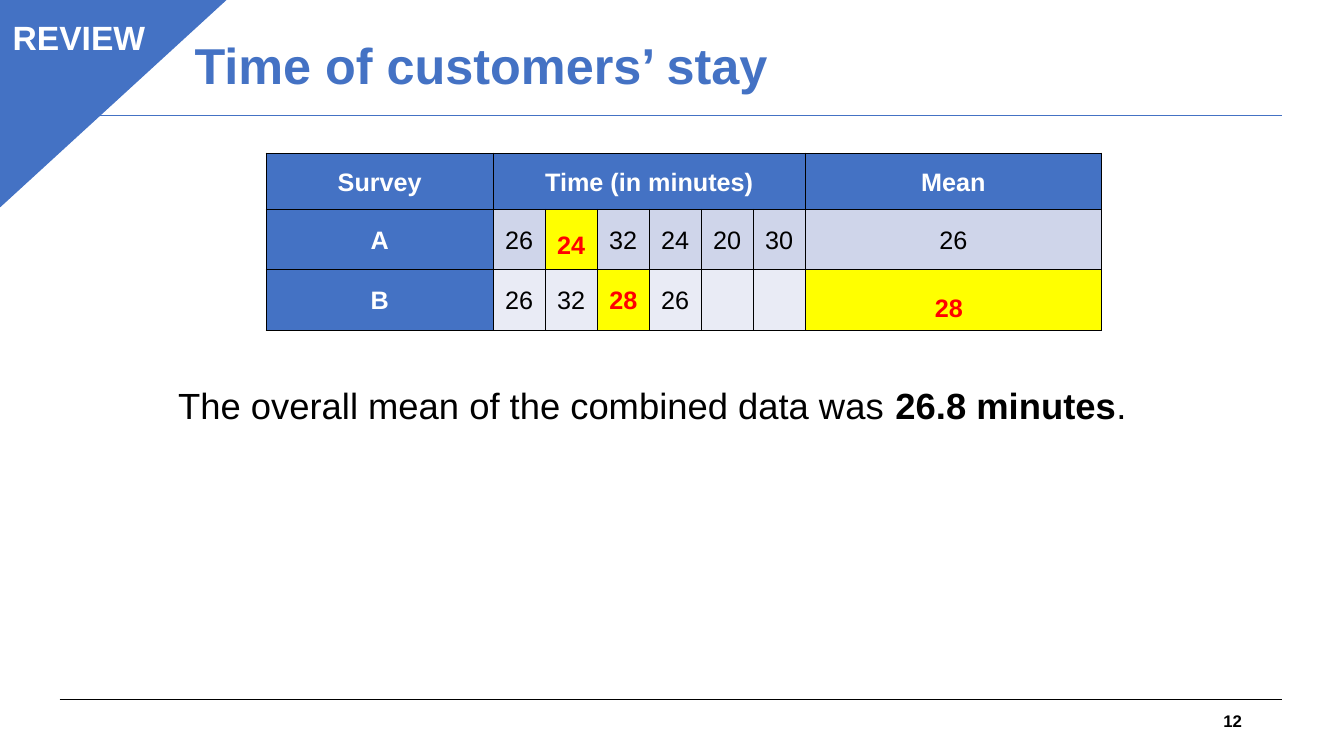
from dataclasses import dataclass

from pptx import Presentation
from pptx.dml.color import RGBColor
from pptx.enum.shapes import MSO_CONNECTOR as Line, MSO_SHAPE as Shape
from pptx.enum.text import MSO_ANCHOR as Anchor, MSO_AUTO_SIZE as Fit, PP_ALIGN as Align
from pptx.oxml import parse_xml
from pptx.oxml.ns import nsdecls
from pptx.util import Cm, Pt


@dataclass(frozen=True)
class Theme:
    font: str = "Arial"
    blue: str = "4472C4"
    black: str = "000000"
    white: str = "FFFFFF"
    red: str = "FF0000"
    yellow: str = "FFFF00"
    band_dark: str = "CFD5EA"
    band_light: str = "E9EBF5"
    title: int = 36
    body: int = 26
    badge: int = 24
    cell: int = 18
    page: int = 12


def set_all(obj, formats):
    for name, value in formats.items():
        setattr(obj, name, value)


class SlideBuilder:
    def __init__(self, slide, theme):
        self.slide = slide
        self.shapes = slide.shapes
        self.theme = theme

    def fill_text(self, tf, runs, size, color, align=Align.LEFT, spacing=None, **frame):
        """Fill a text frame with one paragraph of (text, bold) runs."""
        set_all(tf, {"word_wrap": True, **frame})
        p = tf.paragraphs[0]
        set_all(p, {"alignment": align, "line_spacing": spacing})
        for text, bold in runs:
            r = p.add_run()
            r.text = text
            set_all(r.font, {"name": self.theme.font, "size": Pt(size), "bold": bold})
            r.font.color.rgb = RGBColor.from_string(color)

    def title(self, text, box):
        sp = self.shapes.title
        set_all(sp, dict(zip(("left", "top", "width", "height"), map(Cm, box))))
        self.fill_text(sp.text_frame, [(text, True)], self.theme.title, self.theme.blue,
                       spacing=0.9, vertical_anchor=Anchor.MIDDLE)

    def text(self, runs, box, size, color, **formats):
        sp = self.shapes.add_textbox(*map(Cm, box))
        self.fill_text(sp.text_frame, runs, size, color, **formats)

    def rule(self, left, right, y, color):
        line = self.shapes.add_connector(Line.STRAIGHT, Cm(left), Cm(y), Cm(right), Cm(y))
        line.line.width = Pt(0.75)
        line.line.color.rgb = RGBColor.from_string(color)
        line.element.spPr.append(parse_xml(f"<a:effectLst {nsdecls('a')}/>"))

    def block(self, kind, box, color, width):
        sp = self.shapes.add_shape(kind, *map(Cm, box))
        sp.shadow.inherit = False
        sp.fill.solid()
        sp.fill.fore_color.rgb = sp.line.color.rgb = RGBColor.from_string(color)
        sp.line.width = Pt(width)
        return sp

    def cell(self, cell, text, fill, color, bold, margin):
        set_all(cell, {f"margin_{side}": Cm(margin)
                       for side in ("left", "right", "top", "bottom")})
        cell.vertical_anchor = Anchor.MIDDLE
        tc_pr = cell._tc.get_or_add_tcPr()
        for edge in ("lnL", "lnR", "lnT", "lnB"):
            tc_pr.append(parse_xml(
                f'<a:{edge} {nsdecls("a")} w="{Pt(1)}"><a:solidFill>'
                f'<a:srgbClr val="{self.theme.black}"/></a:solidFill></a:{edge}>'))
        cell.fill.solid()
        cell.fill.fore_color.rgb = RGBColor.from_string(fill)
        if text:
            self.fill_text(cell.text_frame, [(text, bold)], self.theme.cell, color,
                           align=Align.CENTER, spacing=1.07)

    def table(self, rows, bands, marked, left, top, widths, heights):
        t = self.theme
        frame = self.shapes.add_table(len(rows), len(widths), Cm(left), Cm(top),
                                      Cm(sum(widths)), Cm(sum(heights)))
        table = frame.table
        set_all(table, {"first_row": False, "horz_banding": False})
        for column, width in zip(table.columns, widths):
            column.width = Cm(width)
        for row, height in zip(table.rows, heights):
            row.height = Cm(height)
        for i, values in enumerate(rows):
            for j, value in enumerate(values):
                head = i == 0 or j == 0
                fill = t.blue if head else t.yellow if (i, j) in marked else bands[i - 1]
                self.cell(table.cell(i, j), value, fill, t.white if head else t.black,
                          head, 0.03 if i else 0)
        return table


def main():
    prs = Presentation()
    set_all(prs, {"slide_width": Cm(33.87), "slide_height": Cm(19.05)})
    t = Theme()
    page = SlideBuilder(prs.slides.add_slide(prs.slide_layouts[5]), t)

    # Title, rules and page number
    for y, color in ((17.63, t.black), (2.9, t.blue)):
        page.rule(1.5, 32.31, y, color)
    page.title("Time of customers’ stay", (4.65, 0.3, 25.4, 2.82))
    page.text([("12", True)], (23.93, 17.65, 7.62, 1.02), t.page, t.black,
              align=Align.RIGHT, vertical_anchor=Anchor.MIDDLE)

    # Corner badge
    corner = page.block(Shape.ISOSCELES_TRIANGLE, (-0.08, -0.05, 5.82, 5.33), t.blue, 1)
    corner.adjustments[0] = 0
    corner.element.spPr.xfrm.set("flipV", "1")
    badge = page.block(Shape.RECTANGLE, (0.03, 0.3, 3.92, 1.27), t.blue, 0.75)
    page.fill_text(badge.text_frame, [("REVIEW", True)], t.badge, t.white,
                   align=Align.CENTER, auto_size=Fit.SHAPE_TO_FIT_TEXT)

    # Survey table, with the answer cells left open
    rows = [
        ["Survey", "Time (in minutes)", "", "", "", "", "", "Mean"],
        ["A", "26", "", "32", "24", "20", "30", "26"],
        ["B", "26", "32", "", "26", "", "", ""],
    ]
    table = page.table(rows, (t.band_dark, t.band_light), {(1, 2), (2, 3), (2, 7)},
                       6.71, 3.86, [5.72] + [1.31] * 6 + [7.47], [1.42, 1.52, 1.52])
    table.cell(0, 1).merge(table.cell(0, 6))

    # Conclusion
    page.text([("The overall mean of the combined data was ", False),
               ("26.8 minutes", True), (".", False)],
              (4.24, 9.53, 25.4, 1.37), t.body, t.black, auto_size=Fit.SHAPE_TO_FIT_TEXT)

    # Answers laid over the yellow cells
    for answer, left, top, align in (("28", 15.11, 6.99, Align.LEFT),
                                     ("28", 23.19, 7.19, Align.CENTER),
                                     ("24", 13.67, 5.59, Align.CENTER)):
        page.text([(answer, True)], (left, top, 1.45, 1.02), t.cell, t.red,
                  align=align, spacing=1.07, auto_size=Fit.SHAPE_TO_FIT_TEXT)

    prs.save("out.pptx")


if __name__ == "__main__":
    main()
